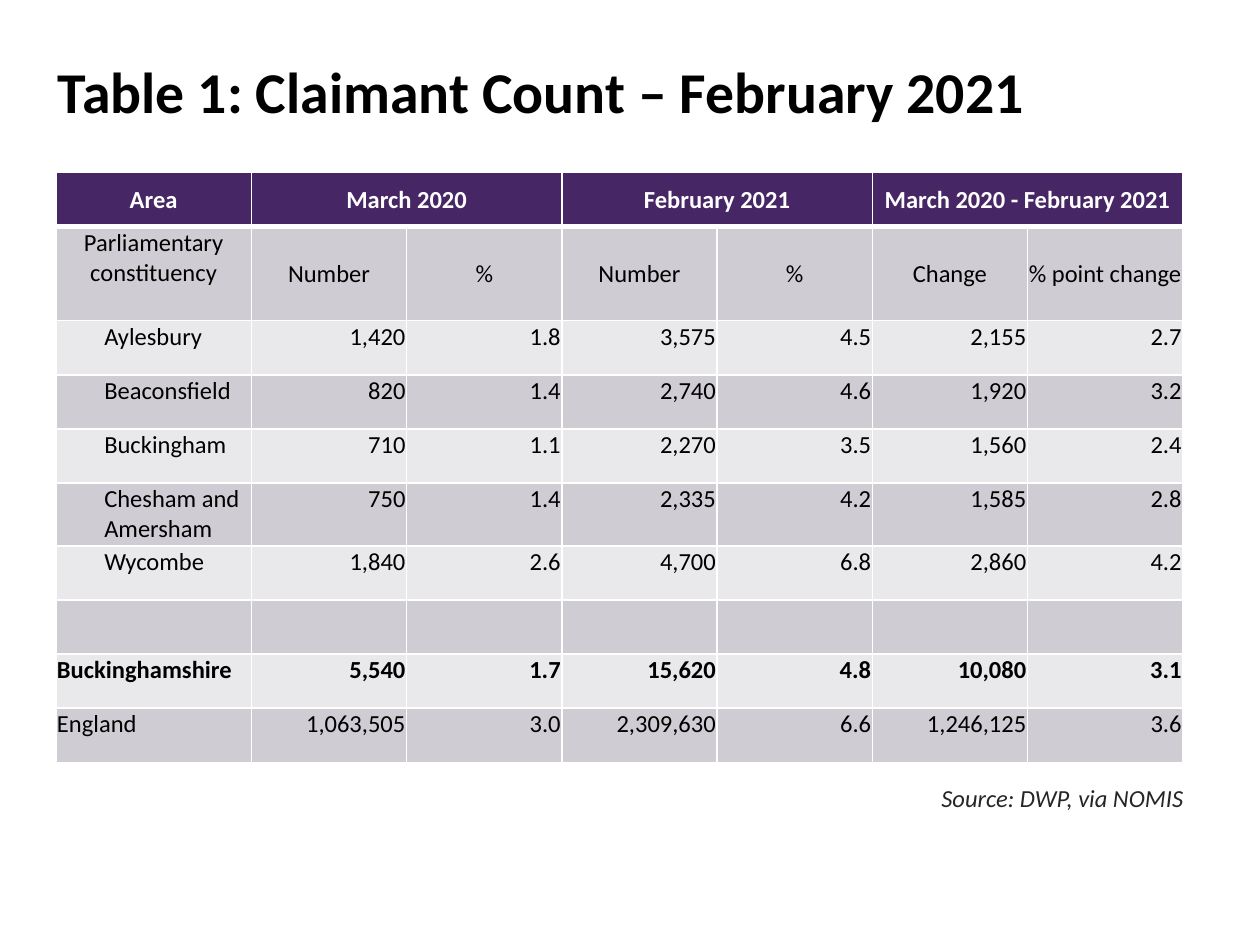
"""Build a slide with a table of the claimant count by area."""
from dataclasses import dataclass

from lxml.etree import SubElement
from pptx import Presentation
from pptx.dml.color import RGBColor
from pptx.enum.text import MSO_ANCHOR, MSO_AUTO_SIZE, PP_ALIGN
from pptx.oxml.ns import qn
from pptx.slide import Slide
from pptx.table import Table, _Cell
from pptx.text.text import _Paragraph
from pptx.util import Pt

BLACK = RGBColor(0x00, 0x00, 0x00)
WHITE = RGBColor(0xFF, 0xFF, 0xFF)
PURPLE = RGBColor(0x47, 0x26, 0x65)
DARK_BAND = RGBColor(0xCF, 0xCD, 0xD3)
LIGHT_BAND = RGBColor(0xE9, 0xE8, 0xEA)
SOURCE_GREY = RGBColor(0x26, 0x26, 0x26)

FONT_NAME = "Calibri"
TEXT_SIZE = 14
AREA_WIDTH, VALUE_WIDTH = 111.8, 88.7
ROW_HEIGHT = 30.9
CONSTITUENCY_INDENT = 27
THIN_LINE, THICK_LINE = 1, 3


@dataclass(frozen=True)
class TableRow:
    area: str
    values: tuple[str, ...]
    height: float = ROW_HEIGHT
    heading: bool = False
    bold: bool = False
    indent: float = 0


def constituency(area: str, *values: str, height: float = ROW_HEIGHT) -> TableRow:
    return TableRow(area, values, height, indent=CONSTITUENCY_INDENT)


ROWS = (
    TableRow("Area", ("March 2020", "", "February 2021", "", "March 2020 - February 2021", ""),
             heading=True, bold=True),
    TableRow("Parliamentary constituency",
             ("Number", "%", "Number", "%", "Change", "% point change"),
             height=53.7, heading=True),
    constituency("Aylesbury", "1,420", "1.8", "3,575", "4.5", "2,155", "2.7"),
    constituency("Beaconsfield", "820", "1.4", "2,740", "4.6", "1,920", "3.2"),
    constituency("Buckingham", "710", "1.1", "2,270", "3.5", "1,560", "2.4"),
    constituency("Chesham and Amersham", "750", "1.4", "2,335", "4.2", "1,585", "2.8", height=36),
    constituency("Wycombe", "1,840", "2.6", "4,700", "6.8", "2,860", "4.2"),
    TableRow("", ("",) * 6),
    TableRow("Buckinghamshire", ("5,540", "1.7", "15,620", "4.8", "10,080", "3.1"), bold=True),
    TableRow("England", ("1,063,505", "3.0", "2,309,630", "6.6", "1,246,125", "3.6")),
)


def format_runs(paragraph: _Paragraph, size: float, color: RGBColor,
                bold: bool = False, italic: bool = False) -> None:
    for run in paragraph.runs:
        run.font.name = FONT_NAME
        run.font.size = Pt(size)
        run.font.color.rgb = color
        run.font.bold = bold
        run.font.italic = italic


def set_borders(cell: _Cell, top: float, bottom: float) -> None:
    properties = cell._tc.get_or_add_tcPr()
    widths = {"a:lnL": THIN_LINE, "a:lnR": THIN_LINE, "a:lnT": top, "a:lnB": bottom}
    for tag, width in widths.items():
        line = SubElement(properties, qn(tag), w=str(Pt(width)))
        SubElement(SubElement(line, qn("a:solidFill")), qn("a:srgbClr"), val=str(WHITE))


def fill_cell(cell: _Cell, text: str, row: TableRow, row_index: int, column_index: int) -> None:
    cell.margin_left = cell.margin_right = cell.margin_top = Pt(0.7)
    cell.margin_bottom = Pt(0)
    set_borders(cell, THICK_LINE if row_index == 1 else THIN_LINE,
                THICK_LINE if row_index == 0 else THIN_LINE)
    cell.fill.solid()
    band = DARK_BAND if row_index % 2 else LIGHT_BAND
    cell.fill.fore_color.rgb = PURPLE if row_index == 0 else band
    is_area = column_index == 0
    top_anchored = not row.heading or (is_area and row_index == 1)
    cell.vertical_anchor = MSO_ANCHOR.TOP if top_anchored else MSO_ANCHOR.MIDDLE
    cell.text_frame.text = text
    paragraph = cell.text_frame.paragraphs[0]
    if row.heading:
        paragraph.alignment = PP_ALIGN.CENTER
    else:
        paragraph.alignment = PP_ALIGN.LEFT if is_area else PP_ALIGN.RIGHT
    if is_area and row.indent:
        paragraph.level = 1
        paragraph._p.get_or_add_pPr().set("marL", str(Pt(row.indent)))
    format_runs(paragraph, TEXT_SIZE, WHITE if row_index == 0 else BLACK, row.bold)


def add_claimant_table(slide: Slide) -> Table:
    widths = [AREA_WIDTH] + [VALUE_WIDTH] * 6
    height = sum(row.height for row in ROWS)
    table = slide.shapes.add_table(len(ROWS), len(widths), Pt(31.9), Pt(98.7),
                                   Pt(sum(widths)), Pt(height)).table
    for column, width in zip(table.columns, widths):
        column.width = Pt(width)
    for row_index, row in enumerate(ROWS):
        table.rows[row_index].height = Pt(row.height)
        for column_index, text in enumerate((row.area, *row.values)):
            fill_cell(table.cell(row_index, column_index), text, row, row_index, column_index)
    for first_column in (1, 3, 5):
        table.cell(0, first_column).merge(table.cell(0, first_column + 1))
    return table


def add_title(slide: Slide, text: str) -> None:
    title = slide.shapes.title
    title.left, title.top, title.width, title.height = Pt(25.9), Pt(17.3), Pt(620.6), Pt(73.4)
    text_frame = title.text_frame
    text_frame.text = text
    text_frame.auto_size = MSO_AUTO_SIZE.NONE
    text_frame.vertical_anchor = MSO_ANCHOR.MIDDLE
    paragraph = text_frame.paragraphs[0]
    paragraph.alignment = PP_ALIGN.LEFT
    paragraph.line_spacing = 0.9
    format_runs(paragraph, 33, BLACK, bold=True)


def add_source(slide: Slide, text: str) -> None:
    text_frame = slide.shapes.add_textbox(Pt(511.9), Pt(444.2), Pt(171.4), Pt(24.5)).text_frame
    text_frame.word_wrap = True
    text_frame.auto_size = MSO_AUTO_SIZE.SHAPE_TO_FIT_TEXT
    text_frame.text = text
    paragraph = text_frame.paragraphs[0]
    paragraph.alignment = PP_ALIGN.RIGHT
    format_runs(paragraph, TEXT_SIZE, SOURCE_GREY, italic=True)


def main() -> None:
    presentation = Presentation()
    presentation.slide_width, presentation.slide_height = Pt(720), Pt(540)
    slide = presentation.slides.add_slide(presentation.slide_layouts.get_by_name("Title Only"))
    add_title(slide, "Table 1: Claimant Count – February 2021")
    add_claimant_table(slide)
    add_source(slide, "Source: DWP, via NOMIS")
    presentation.save("out.pptx")


if __name__ == "__main__":
    main()
